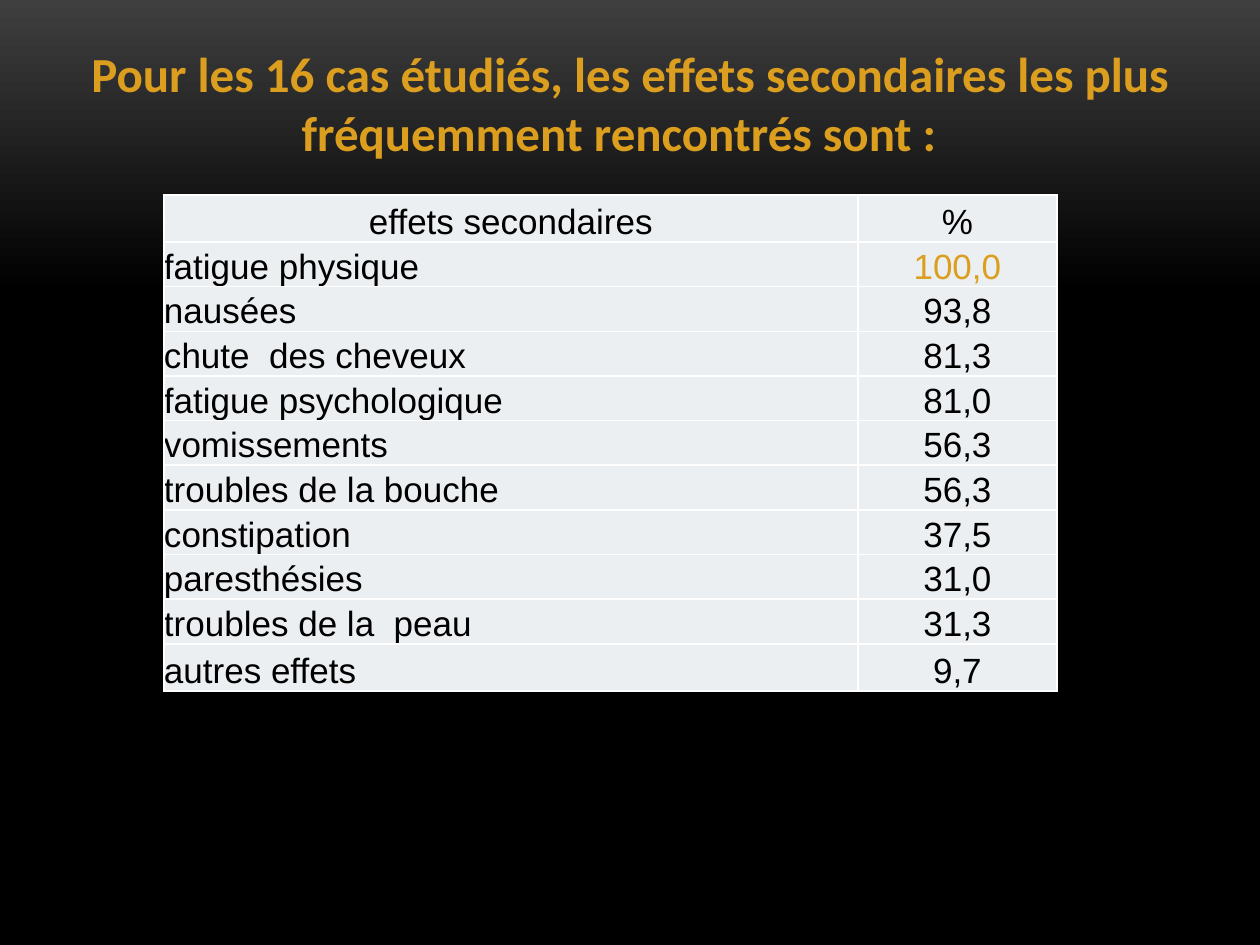
from lxml import etree
from pptx import Presentation
from pptx.dml.color import RGBColor
from pptx.enum.text import MSO_ANCHOR, MSO_AUTO_SIZE, PP_ALIGN
from pptx.oxml.ns import qn
from pptx.util import Pt

PX = 914400 // 126
LEFT, CENTER = PP_ALIGN.LEFT, PP_ALIGN.CENTER
TOP, BOTTOM = MSO_ANCHOR.TOP, MSO_ANCHOR.BOTTOM
NO_FIT = MSO_AUTO_SIZE.NONE
COLORS = {"gold": "DC9E1F", "black": "000000", "gray": "3F3F3F",
          "cell": "ECEFF1", "line": "FFFFFF"}
TITLE = "Pour les 16 cas étudiés, les effets secondaires les plus fréquemment rencontrés sont :  "
ROWS = [
    ("effets secondaires", "%"),
    ("fatigue physique", "100,0"),
    ("nausées", "93,8"),
    ("chute  des cheveux", "81,3"),
    ("fatigue psychologique", "81,0"),
    ("vomissements", "56,3"),
    ("troubles de la bouche", "56,3"),
    ("constipation", "37,5"),
    ("paresthésies", "31,0"),
    ("troubles de la  peau", "31,3"),
    ("autres effets", "9,7"),
]


def px(n):
    return n * PX


def rgb(name):
    return RGBColor.from_string(COLORS[name])


def write(frame, text, font, size, color, align, bold=False):
    para = frame.paragraphs[0]
    para.alignment = align
    run = para.add_run()
    run.text = text
    run.font.name = font
    run.font.size = Pt(size)
    run.font.bold = bold
    run.font.color.rgb = rgb(color)


def paint_back(slide):
    fill = slide.background.fill
    fill.gradient()
    fill.gradient_angle = 270
    for stop, (name, pos) in zip(fill.gradient_stops, [("gray", 0), ("black", 0.31)]):
        stop.color.rgb = rgb(name)
        stop.position = pos


def add_title(slide, left, top, width, height):
    title = slide.shapes.title
    title.left, title.top = px(left), px(top)
    title.width, title.height = px(width), px(height)
    frame = title.text_frame
    frame.word_wrap = True
    frame.auto_size = NO_FIT
    frame.vertical_anchor = TOP
    write(frame, TITLE, "Calibri", 28, "gold", CENTER, True)


def add_lines(cell):
    """Draw a thin line on all four sides of the cell."""
    props = cell._tc.get_or_add_tcPr()
    for at, side in enumerate(("lnL", "lnR", "lnT", "lnB")):
        line = etree.Element(qn(f"a:{side}"), w=str(Pt(1)))
        fill = etree.SubElement(line, qn("a:solidFill"))
        etree.SubElement(fill, qn("a:srgbClr"), val=COLORS["line"])
        props.insert(at, line)


def fill_cell(cell, text, align, color):
    cell.margin_left = cell.margin_right = 0
    cell.margin_top = cell.margin_bottom = 0
    cell.vertical_anchor = BOTTOM
    cell.fill.solid()
    cell.fill.fore_color.rgb = rgb("cell")
    add_lines(cell)
    write(cell.text_frame, text, "Arial", 20, color, align)


def add_grid(slide, left, top, width, height):
    count, edge, rate = len(ROWS), 47, 199
    table = slide.shapes.add_table(
        count, 2, px(left), px(top), px(width), px(height)).table
    table.columns[0].width = px(width - rate)
    table.columns[1].width = px(rate)
    inner = px(height - 2 * edge) // (count - 2)
    for r, texts in enumerate(ROWS):
        table.rows[r].height = px(edge) if r in (0, count - 1) else inner
        for c, text in enumerate(texts):
            align = LEFT if r and not c else CENTER
            color = "gold" if text == "100,0" else "black"
            fill_cell(table.cell(r, c), text, align, color)


def main():
    deck = Presentation()
    deck.slide_width, deck.slide_height = px(1260), px(945)
    slide = deck.slides.add_slide(deck.slide_layouts[5])
    paint_back(slide)
    add_title(slide, 0, 37, 1260, 189)
    add_grid(slide, 164, 195, 893, 496)
    deck.save("out.pptx")


if __name__ == "__main__":
    main()
